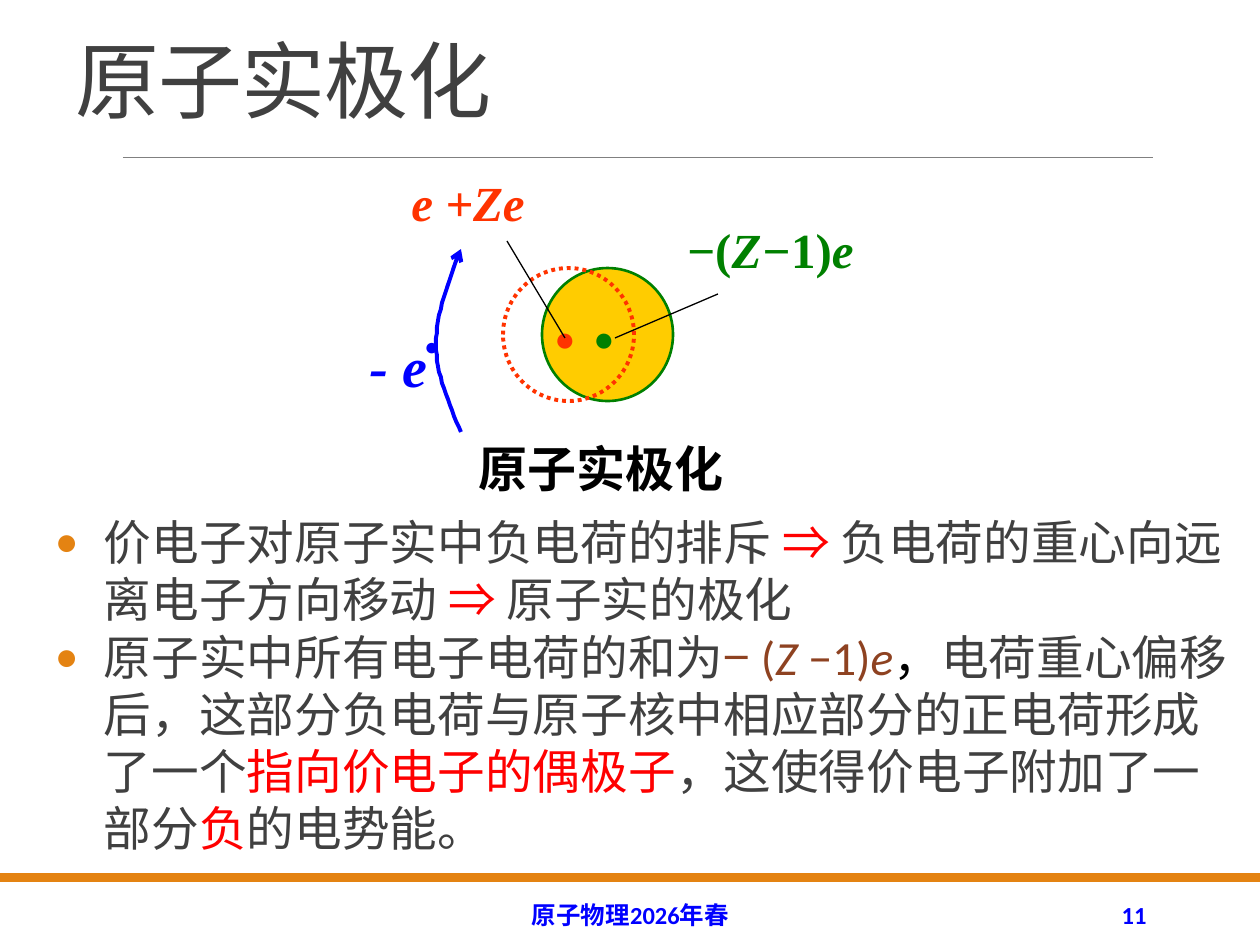
from lxml import etree
from pptx import Presentation
from pptx.dml.color import RGBColor
from pptx.enum.dml import MSO_LINE
from pptx.enum.shapes import MSO_CONNECTOR, MSO_SHAPE
from pptx.enum.text import MSO_ANCHOR, PP_ALIGN
from pptx.oxml.ns import qn
from pptx.util import Emu, Pt

PX = 914400 / 126
TOP, MIDDLE, BOTTOM = MSO_ANCHOR.TOP, MSO_ANCHOR.MIDDLE, MSO_ANCHOR.BOTTOM
LEFT, CENTER, RIGHT = PP_ALIGN.LEFT, PP_ALIGN.CENTER, PP_ALIGN.RIGHT
ORANGE, GREY, BLUE, RED = "E48312", "404040", "0000FF", "FF0000"
GREEN, SCARLET, BROWN, BLACK = "008000", "FF3300", "8E4221", "000000"
SERIF, SANS = "Times New Roman", "Calibri"


def emu(*lengths):
    return [Emu(round(v * PX)) for v in lengths]


def add_text(box, runs, size, font=SERIF, bold=True, align=LEFT, anchor=TOP):
    """Add a text box with one paragraph of (text, colour, italic) runs."""
    tf = slide.shapes.add_textbox(*emu(*box)).text_frame
    tf.word_wrap = True
    tf.vertical_anchor = anchor
    p = tf.paragraphs[0]
    p.alignment = align
    add_runs = [(p.add_run(), run) for run in runs]
    for r, (text, color, italic) in add_runs:
        r.text = text
        r.font.name, r.font.size = font, Pt(size)
        r.font.bold, r.font.italic = bold, italic
        r.font.color.rgb = RGBColor.from_string(color)
    return tf


prs = Presentation()
prs.slide_width, prs.slide_height = emu(1260, 945)
slide = prs.slides.add_slide(prs.slide_layouts[6])

# Frame: bottom bar, title and footer
bar = slide.shapes.add_shape(MSO_SHAPE.RECTANGLE, *emu(0, 873, 1260, 9))
bar.shadow.inherit = False
bar.fill.solid()
bar.fill.fore_color.rgb = RGBColor.from_string(ORANGE)
bar.line.fill.background()

title = add_text((63, 8, 1144, 128), [("原子实极化", GREY, False)], 48, SANS, False, anchor=BOTTOM)
title.paragraphs[0].line_spacing = 0.85
title.paragraphs[0].runs[0].font._element.set("spc", "-50")

add_text((381, 890, 499, 50), [("原子物理2026年春", BLUE, False)], 14, SANS, align=CENTER, anchor=MIDDLE)
add_text((1023, 890, 136, 50), [("11", BLUE, False)], 14, SANS, align=RIGHT, anchor=MIDDLE)

# Body text
bullets = [
    [("价电子对原子实中负电荷的排斥 ", GREY, False), ("⇒ ", RED, False),
     ("负电荷的重心向远离电子方向移动 ", GREY, False), ("⇒ ", RED, False),
     ("原子实的极化", GREY, False)],
    [("原子实中所有电子电荷的和为", GREY, False), ("− (", BROWN, False),
     ("Z ", BROWN, True), ("−1)", BROWN, False), ("e", BROWN, True),
     ("，", BLACK, False),
     ("电荷重心偏移后，这部分负电荷与原子核中相应部分的正电荷形成了一个", GREY, False),
     ("指向价电子的偶极子", RED, False), ("，这使得价电子附加了一部分", GREY, False),
     ("负", RED, False), ("的电势能。", GREY, False)],
]
tf = slide.shapes.add_textbox(*emu(53, 507, 1176, 365)).text_frame
tf.word_wrap = True
tf.margin_left = tf.margin_right = 0
for i, runs in enumerate(bullets):
    p = tf.add_paragraph() if i else tf.paragraphs[0]
    pPr = p._p.get_or_add_pPr()
    pPr.set("marL", str(emu(51)[0]))
    pPr.set("indent", str(emu(-49)[0]))
    bullet_color = etree.SubElement(pPr, qn("a:buClr"))
    etree.SubElement(bullet_color, qn("a:srgbClr"), val=ORANGE)
    etree.SubElement(pPr, qn("a:buFont"), typeface=SANS)
    etree.SubElement(pPr, qn("a:buChar"), char="•")
    for text, color, italic in runs:
        r = p.add_run()
        r.text = text
        r.font.name, r.font.size, r.font.italic = SANS, Pt(27.2), italic
        r.font.color.rgb = RGBColor.from_string(color)

# Atomic core: shifted electron cloud and its former place
for left, fill, color, width, dash in [
    (542, "FFCC00", GREEN, 1.5, None),
    (503, None, SCARLET, 2.25, MSO_LINE.ROUND_DOT),
]:
    sp = slide.shapes.add_shape(MSO_SHAPE.OVAL, *emu(left, 268, 131, 133))
    sp.shadow.inherit = False
    if fill:
        sp.fill.solid()
        sp.fill.fore_color.rgb = RGBColor.from_string(fill)
    else:
        sp.fill.background()
    sp.line.color.rgb = RGBColor.from_string(color)
    sp.line.width = Pt(width)
    if dash:
        sp.line.dash_style = dash

# Orbit of the valence electron: two cubic Bezier arcs, traced in short steps
STEPS = 16
arcs = [
    [(461, 249), (449, 281), (436, 314), (436, 344)],
    [(436, 344), (436, 374), (449, 403), (461, 432)],
]
points = []
for arc in arcs:
    for step in range(1, STEPS + 1):
        t = step / STEPS
        weights = [(1 - t) ** 3, 3 * t * (1 - t) ** 2, 3 * t * t * (1 - t), t ** 3]
        points.append([sum(w * c for w, c in zip(weights, axis)) for axis in zip(*arc)])
builder = slide.shapes.build_freeform(*arcs[0][0], scale=PX)
builder.add_line_segments(points, close=False)
orbit = builder.convert_to_shape()
orbit.shadow.inherit = False
orbit.fill.background()
orbit.line.color.rgb = RGBColor.from_string(BLUE)
orbit.line.width = Pt(2.25)
etree.SubElement(orbit.line._get_or_add_ln(), qn("a:headEnd"), type="arrow")

# Charges, labels and leader lines
for box, runs, size in [
    ((581, 310, 116, 105), [("●", GREEN, False)], 20),
    ((542, 310, 116, 105), [("●", SCARLET, False)], 20),
    ((412, 325, 116, 105), [("●", BLUE, False)], 14),
    ((466, 432, 301, 83), [("原子实极化", BLACK, False)], 28),
    ((357, 325, 129, 102), [("- e", BLUE, True)], 32),
    ((399, 166, 266, 76), [("e +Ze", SCARLET, True)], 28),
    ((675, 213, 213, 76), [("−(", GREEN, False), ("Z−", GREEN, True),
                           ("1)", GREEN, False), ("e", GREEN, True)], 28),
]:
    add_text(box, runs, size)

for ends, color, width in [
    ((123, 157, 1153, 157), "808080", 0.5),
    ((507, 241, 565, 338), BLACK, 0.75),
    ((615, 338, 718, 294), BLACK, 0.75),
]:
    line = slide.shapes.add_connector(MSO_CONNECTOR.STRAIGHT, *emu(*ends))
    line.line.color.rgb = RGBColor.from_string(color)
    line.line.width = Pt(width)
    etree.SubElement(line._element.spPr, qn("a:effectLst"))

prs.save("out.pptx")
